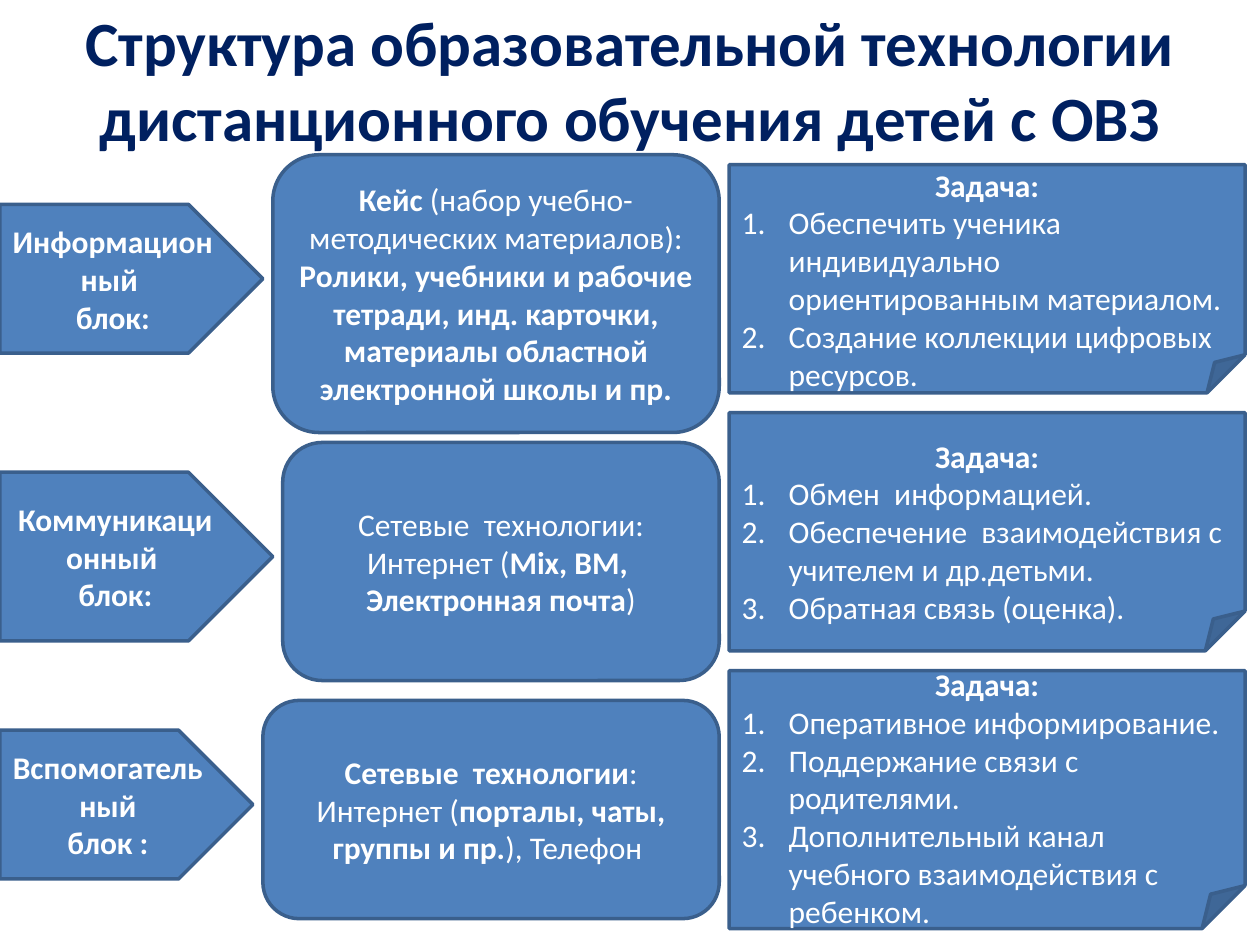
from dataclasses import dataclass

from lxml.etree import SubElement
from pptx import Presentation
from pptx.dml.color import RGBColor
from pptx.enum.shapes import MSO_SHAPE
from pptx.enum.text import MSO_ANCHOR, PP_ALIGN
from pptx.oxml.ns import qn
from pptx.util import Cm, Pt

FONT = "Calibri"
FILL, OUTLINE, WHITE, NAVY = "4F81BD", "3A5F8C", "FFFFFF", "002060"
CASE_RIGHT = 14.5
TASK_LEFT, TASK_WIDTH = 14.7, 10.4
LIST_INDENT = Cm(0.95)


@dataclass
class Area:
    """Vertical place and width of one shape, in centimetres."""
    top: float
    height: float
    width: float = TASK_WIDTH


@dataclass
class Block:
    """One row: arrow label, means, tasks. Bold text stands between ** marks."""
    label: list[str]
    label_area: Area
    means: list[str]
    means_area: Area
    tasks: list[str]
    task_area: Area


BLOCKS = [
    Block(
        ["**Информационный **", "**блок:**"], Area(4.12, 3, 5.3),
        ["**Кейс** (набор учебно-методических материалов):",
         "**Ролики, учебники и рабочие тетради, инд. карточки, "
         "материалы областной электронной школы и пр.**"],
        Area(3.12, 5.6, 9),
        ["Обеспечить ученика индивидуально ориентированным материалом.",
         "Создание коллекции цифровых ресурсов."],
        Area(3.32, 4.6),
    ),
    Block(
        ["**Коммуникационный **", "**блок:**"], Area(9.52, 3.4, 5.5),
        ["Сетевые  технологии: Интернет (**Mix, ВМ, **",
         "**Электронная почта**)"],
        Area(8.92, 4.8, 8.8),
        ["Обмен  информацией.",
         "Обеспечение  взаимодействия с учителем и др.детьми.",
         "Обратная связь (оценка)."],
        Area(8.32, 4.8),
    ),
    Block(
        ["**Вспомогательный**", "**блок :**"], Area(14.72, 3, 5.1),
        ["**Сетевые  технологии**: Интернет "
         "(**порталы, чаты, группы и пр.**), Телефон "],
        Area(14.12, 4.4, 9.2),
        ["Оперативное информирование.",
         "Поддержание связи с родителями.",
         "Дополнительный канал учебного взаимодействия с ребенком."],
        Area(13.52, 5.2),
    ),
]


def color(value: str) -> RGBColor:
    return RGBColor.from_string(value)


def write(para, text: str, *, size: float = 18, fill: str = WHITE,
          align=PP_ALIGN.CENTER, numbered: bool = False) -> None:
    """Fill a paragraph, switching bold at each ** mark."""
    para.alignment = align
    if numbered:
        properties = para._p.get_or_add_pPr()
        properties.set("marL", str(LIST_INDENT))
        properties.set("indent", str(-LIST_INDENT))
        SubElement(properties, qn("a:buFont"), typeface="+mj-lt")
        SubElement(properties, qn("a:buAutoNum"), type="arabicPeriod")
    for index, part in enumerate(text.split("**")):
        if part:
            span = para.add_run()
            span.text = part
            span.font.name = FONT
            span.font.size = Pt(size)
            span.font.bold = index % 2 == 1
            span.font.color.rgb = color(fill)


def add_box(page, kind: MSO_SHAPE, left: float, area: Area,
            lines: list[str], tasks: tuple | list = ()):
    """Draw a filled shape with centred lines and numbered tasks below."""
    box = page.shapes.add_shape(
        kind, Cm(left), Cm(area.top), Cm(area.width), Cm(area.height))
    box.shadow.inherit = False
    box.fill.solid()
    box.fill.fore_color.rgb = color(FILL)
    box.line.color.rgb = color(OUTLINE)
    box.line.width = Pt(2)
    frame = box.text_frame
    frame.word_wrap = True
    frame.vertical_anchor = MSO_ANCHOR.MIDDLE
    for index, text in enumerate([*lines, *tasks]):
        para = frame.add_paragraph() if index else frame.paragraphs[0]
        numbered = index >= len(lines)
        write(para, text, numbered=numbered,
              align=PP_ALIGN.LEFT if numbered else PP_ALIGN.CENTER)
    return box


def add_block(page, block: Block) -> None:
    add_box(page, MSO_SHAPE.ROUNDED_RECTANGLE,
            CASE_RIGHT - block.means_area.width, block.means_area, block.means)
    add_box(page, MSO_SHAPE.PENTAGON, 0, block.label_area, block.label)
    note = add_box(page, MSO_SHAPE.FOLDED_CORNER, TASK_LEFT, block.task_area,
                   ["**Задача:**"], block.tasks)
    # The notes sit one line lower than the middle of their box
    note.text_frame.margin_top = Cm(0.9)


def main() -> None:
    deck = Presentation()
    deck.slide_width, deck.slide_height = Cm(25.4), Cm(19.05)
    page = deck.slides.add_slide(deck.slide_layouts[5])

    # Title
    title = page.shapes.title
    title.left, title.top = Cm(1.27), Cm(0)
    title.width, title.height = Cm(22.86), Cm(3.17)
    title.text_frame.vertical_anchor = MSO_ANCHOR.MIDDLE
    write(title.text_frame.paragraphs[0],
          "**Структура образовательной технологии "
          "дистанционного обучения детей с ОВЗ**", size=36, fill=NAVY)

    # Three rows of the structure
    for block in BLOCKS:
        add_block(page, block)

    deck.save("out.pptx")


if __name__ == "__main__":
    main()
